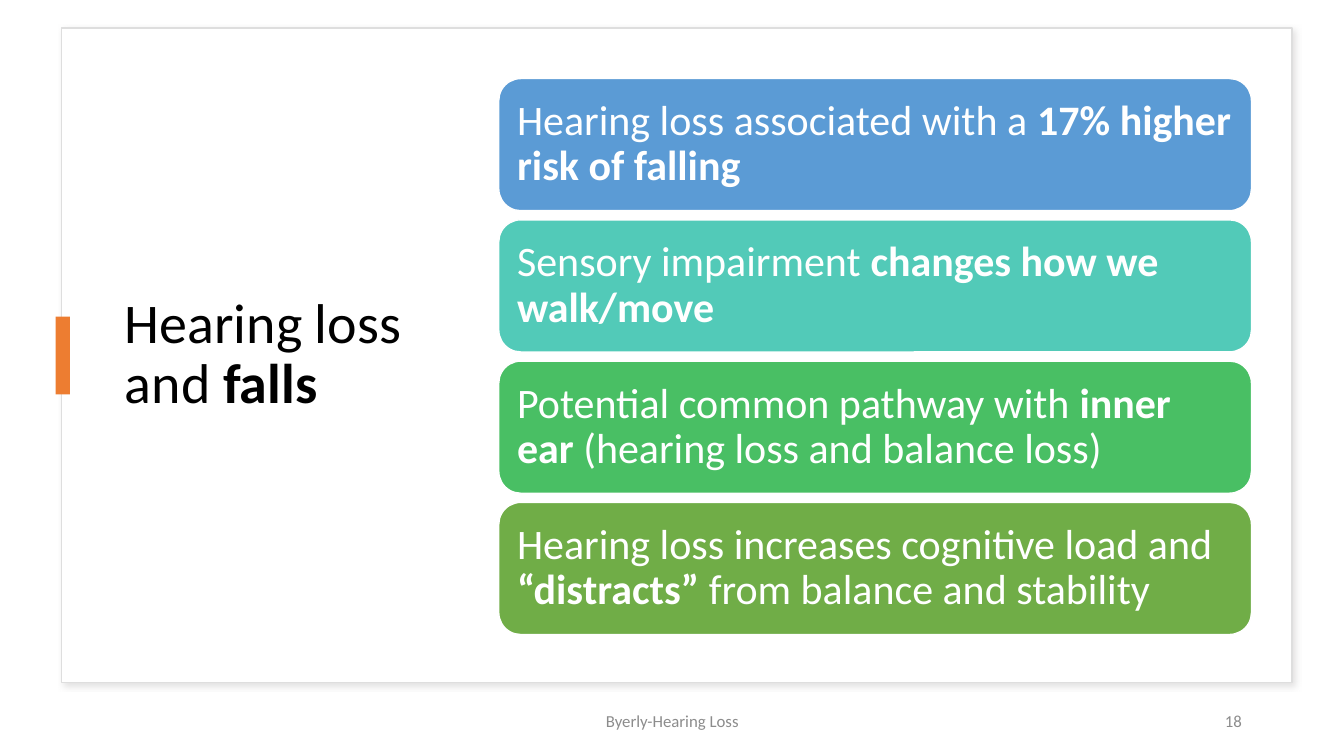
from dataclasses import dataclass
from lxml.etree import SubElement
from pptx import Presentation
from pptx.dml.color import RGBColor
from pptx.enum.shapes import MSO_SHAPE
from pptx.enum.text import MSO_ANCHOR, PP_ALIGN
from pptx.oxml.ns import qn
from pptx.util import Cm, Pt

TITLE = [("Hearing loss and ", False), ("falls", True)]
CARDS = [
    ("5B9BD5", [("Hearing loss associated with a ", False),
                ("17% higher risk of falling", True)]),
    ("52CAB8", [("Sensory impairment ", False),
                ("changes how we walk/move", True)]),
    ("49BF64", [("Potential common pathway with ", False),
                ("inner ear ", True),
                ("(hearing loss and balance loss)", False)]),
    ("70AD47", [("Hearing loss increases cognitive load and ", False),
                ("“distracts” ", True),
                ("from balance and stability", False)]),
]
FOOTERS = [
    ("Byerly-Hearing Loss", 11.23, 11.43, PP_ALIGN.CENTER),
    ("18", 23.93, 7.62, PP_ALIGN.RIGHT),
]


@dataclass(frozen=True)
class Theme:
    font: str = "Calibri"
    white: str = "FFFFFF"
    black: str = "000000"
    border: str = "DEDEDE"
    shadow: str = "C5C3C3"
    accent: str = "ED7D31"
    muted: str = "8C8C8C"
    title_size: int = 40
    card_size: int = 30
    footer_size: int = 12


THEME = Theme()
CARD_LEFT, CARD_TOP, CARD_WIDTH, CARD_HEIGHT = 12.57, 1.98, 18.97, 3.33
CARD_PITCH = 3.56
CARD_INSET = 0.3


def add_panel(page, kind, place, fill, line=None):
    panel = page.shapes.add_shape(kind, *map(Cm, place))
    panel.shadow.inherit = False
    panel.fill.solid()
    panel.fill.fore_color.rgb = RGBColor.from_string(fill)
    if line:
        panel.line.color.rgb = RGBColor.from_string(line)
        panel.line.width = Pt(1)
    else:
        panel.line.fill.background()
    return panel


def cast_shadow(panel):
    effects = panel.element.spPr.find(qn("a:effectLst"))
    shadow = SubElement(effects, qn("a:outerShdw"), blurRad=str(Pt(4)),
                        dist=str(Pt(3)), dir="2700000", algn="tl", rotWithShape="0")
    color = SubElement(shadow, qn("a:srgbClr"), val=THEME.shadow)
    SubElement(color, qn("a:alpha"), val="50000")


def write(box, spans, size, color, align=PP_ALIGN.LEFT, spacing=None):
    frame = box.text_frame
    frame.word_wrap = True
    frame.vertical_anchor = MSO_ANCHOR.MIDDLE
    para = frame.paragraphs[0]
    para.alignment = align
    para.line_spacing = spacing
    for text, bold in spans:
        span = para.add_run()
        span.text = text
        span.font.name = THEME.font
        span.font.size = Pt(size)
        span.font.bold = bold
        span.font.color.rgb = RGBColor.from_string(color)


def add_card(page, row, fill, spans):
    place = (CARD_LEFT, CARD_TOP + row * CARD_PITCH, CARD_WIDTH, CARD_HEIGHT)
    card = add_panel(page, MSO_SHAPE.ROUNDED_RECTANGLE, place, fill, THEME.white)
    frame = card.text_frame
    frame.margin_left = frame.margin_right = Cm(CARD_INSET)
    frame.margin_top = frame.margin_bottom = Cm(CARD_INSET)
    write(card, spans, THEME.card_size, THEME.white, spacing=0.9)


def main():
    deck = Presentation()
    deck.slide_width, deck.slide_height = Cm(33.87), Cm(19.05)
    page = deck.slides.add_slide(deck.slide_layouts[6])

    panel = add_panel(page, MSO_SHAPE.RECTANGLE, (1.55, 0.71, 31.01, 16.62),
                      THEME.white, THEME.border)
    panel.height = Cm(16.49)
    cast_shadow(panel)

    title = page.shapes.add_textbox(Cm(2.9), Cm(1.4), Cm(8.31), Cm(15.11))
    write(title, TITLE, THEME.title_size, THEME.black, spacing=0.9)
    add_panel(page, MSO_SHAPE.RECTANGLE, (1.4, 7.98, 0.36, 1.96), THEME.accent)

    for row, (fill, spans) in enumerate(CARDS):
        add_card(page, row, fill, spans)

    for text, left, width, align in FOOTERS:
        footer = page.shapes.add_textbox(Cm(left), Cm(17.65), Cm(width), Cm(1.02))
        write(footer, [(text, False)], THEME.footer_size, THEME.muted, align)

    deck.save("out.pptx")


if __name__ == "__main__":
    main()
